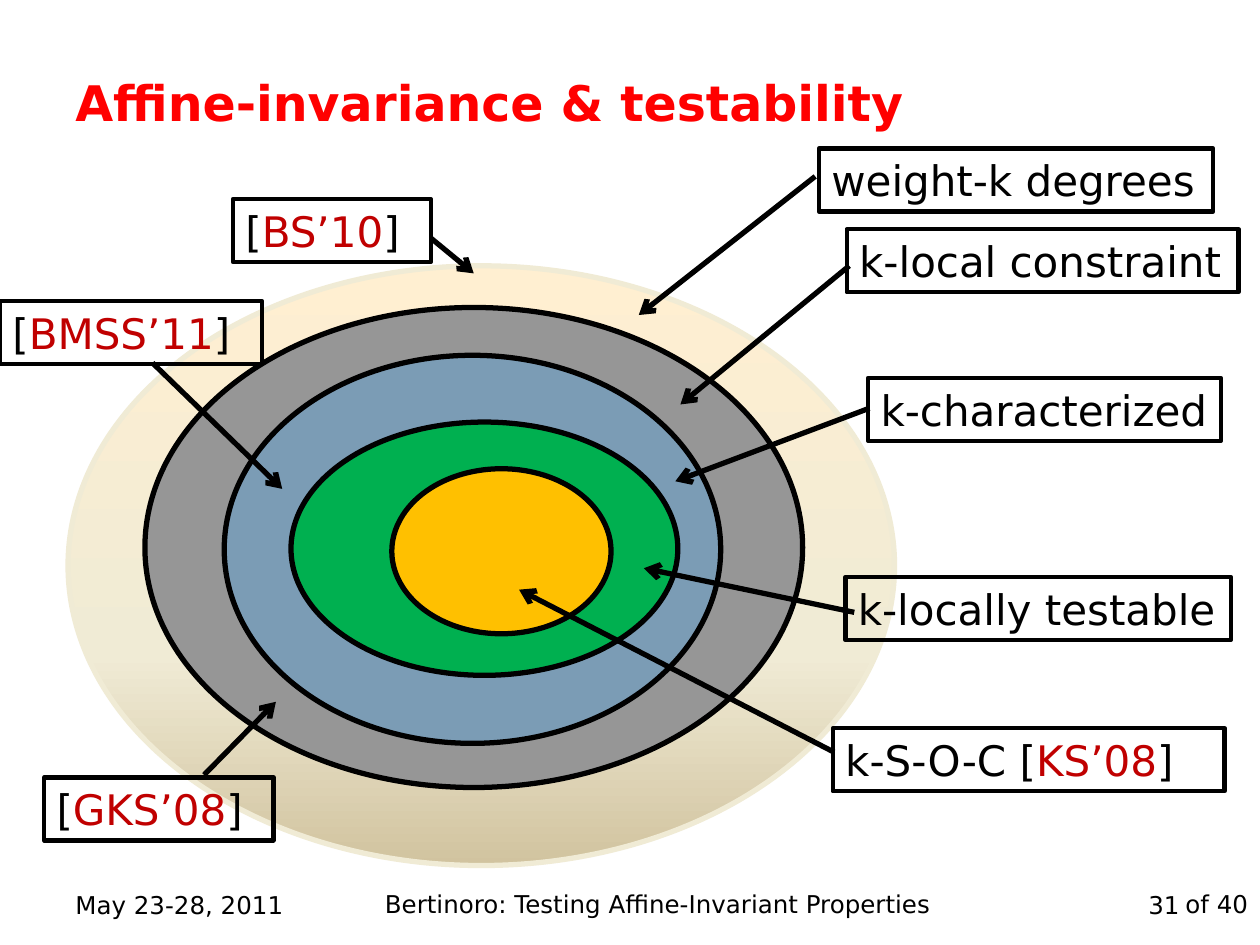
from copy import deepcopy

from lxml import etree
from pptx import Presentation
from pptx.dml.color import RGBColor
from pptx.enum.shapes import MSO_CONNECTOR as CONNECTOR, MSO_SHAPE as SHAPE
from pptx.enum.text import MSO_ANCHOR as ANCHOR, PP_ALIGN as ALIGN
from pptx.oxml.ns import qn
from pptx.util import Inches, Pt


def color(value):
    return RGBColor.from_string(value)


def add_text(box, runs, size, align=ALIGN.LEFT, bold=False, wrap=True):
    left, top, width, height = [Inches(value) for value in box]
    shape = slide.shapes.add_textbox(left, top, width, height)
    text_frame = shape.text_frame
    text_frame.word_wrap = wrap
    paragraph = text_frame.paragraphs[0]
    paragraph.alignment = align
    for text, run_color in runs:
        run = paragraph.add_run()
        run.text = text
        run.font.name = "DejaVu Sans"
        run.font.size = Pt(size)
        run.font.bold = bold
        run.font.color.rgb = color(run_color)
    return shape


BLACK = "000000"
CITATION = "C00000"

presentation = Presentation()
presentation.slide_width = Inches(10)
presentation.slide_height = Inches(7.5)
slide = presentation.slides.add_slide(presentation.slide_layouts[6])

outer_stops = [(0, "FFEFD1"), (0.65, "F0EBD5"), (1, "D1C39F")]
ellipses = [
    (0.54, 2.11, 6.56, 4.76, None, "F0EBD5"),
    (1.15, 2.44, 5.22, 3.81, "969696", BLACK),
    (1.78, 2.82, 3.94, 3.08, "7B9CB5", BLACK),
    (2.31, 3.35, 3.07, 2.01, "00B050", BLACK),
    (3.11, 3.72, 1.74, 1.31, "FFC000", BLACK),
]
for left, top, width, height, fill_color, line_color in ellipses:
    ellipse = slide.shapes.add_shape(
        SHAPE.OVAL, Inches(left), Inches(top), Inches(width), Inches(height))
    ellipse.shadow.inherit = False
    ellipse.line.color.rgb = color(line_color)
    ellipse.line.width = Pt(3)
    if fill_color:
        ellipse.fill.solid()
        ellipse.fill.fore_color.rgb = color(fill_color)
    else:
        ellipse.fill.gradient()
        ellipse.fill.gradient_angle = 270
        stop_list = next(ellipse._element.spPr.iter(qn("a:gsLst")))
        stop_list.append(deepcopy(stop_list[-1]))
        for stop, (position, stop_color) in zip(ellipse.fill.gradient_stops, outer_stops):
            stop.position = position
            stop.color.rgb = color(stop_color)

arrows = [
    (3.42, 1.89, 3.76, 2.17),
    (6.74, 2.11, 5.4, 3.21),
    (6.9, 3.24, 5.36, 3.82),
    (6.78, 4.86, 5.11, 4.51),
    (6.62, 5.97, 4.12, 4.68),
    (1.62, 6.15, 2.19, 5.57),
    (1.21, 2.88, 2.24, 3.88),
    (6.47, 1.4, 5.07, 2.5),
]
for points in arrows:
    arrow = slide.shapes.add_connector(
        CONNECTOR.STRAIGHT, *[Inches(value) for value in points])
    arrow.line.color.rgb = color(BLACK)
    arrow.line.width = Pt(3)
    etree.SubElement(arrow.line._get_or_add_ln(), qn("a:tailEnd"), type="arrow")
    etree.SubElement(arrow._element.spPr, qn("a:effectLst"))

labels = [
    (1.85, 1.58, 1.57, "[", "BS’10", "]"),
    (0, 2.39, 2.08, "[", "BMSS’11", "]"),
    (0.35, 6.17, 1.82, "[", "GKS’08", "]"),
    (6.61, 5.78, 3.11, "k-S-O-C [", "KS’08", "]"),
    (6.5, 1.18, 3.13, "weight-k degrees"),
    (6.72, 1.82, 3.11, "k-local constraint"),
    (6.89, 3, 2.8, "k-characterized"),
    (6.71, 4.58, 3.06, "k-locally testable"),
]
for left, top, width, *parts in labels:
    runs = list(zip(parts, (BLACK, CITATION, BLACK)))
    label = add_text((left, top, width, 0.5), runs, 24, wrap=len(parts) > 1)
    label.line.color.rgb = color(BLACK)
    label.line.width = Pt(2.5)

title = add_text((0.5, 0.42, 9, 0.67),
                 [("Affine-invariance & testability", "FF0000")], 28, bold=True)
title.text_frame.vertical_anchor = ANCHOR.BOTTOM

footers = [
    (0.5, 6.83, 2.33, "May 23-28, 2011", ALIGN.LEFT),
    (2.88, 6.82, 4.68, "Bertinoro: Testing Affine-Invariant Properties", ALIGN.CENTER),
    (7.13, 6.83, 2.33, "31", ALIGN.RIGHT),
]
for left, top, width, text, align in footers:
    footer = add_text((left, top, width, 0.52), [(text, BLACK)], 14, align)
    footer.text_frame.vertical_anchor = ANCHOR.BOTTOM

add_text((9.31, 7.01, 0.71, 0.34), [("of 40", BLACK)], 14, wrap=False)

presentation.save("out.pptx")
